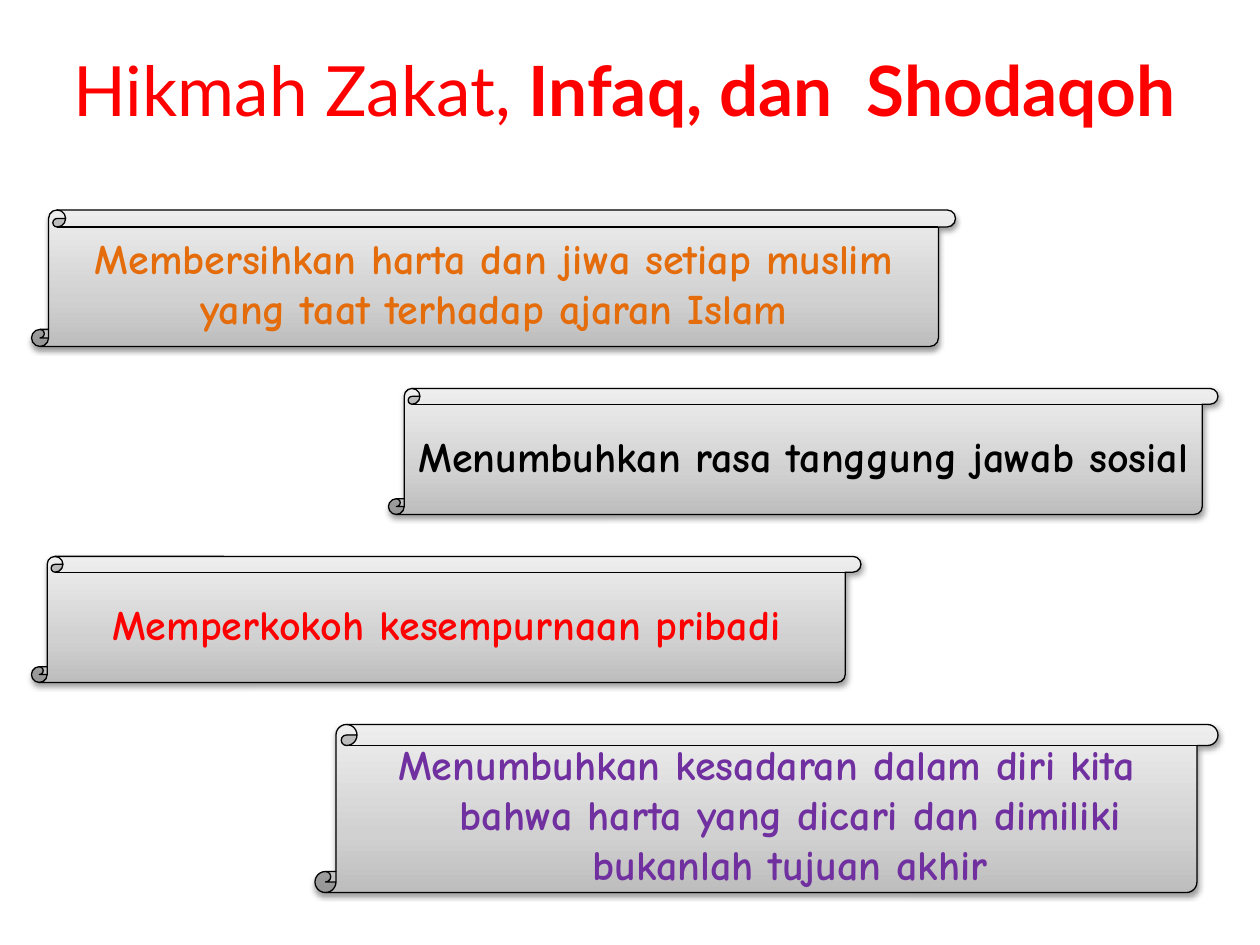
import pptx
import pptx.util
import pptx.dml.color
import pptx.enum.shapes
import pptx.enum.text
import pptx.oxml
import pptx.oxml.ns
import copy

RGB = pptx.dml.color.RGBColor
RED = RGB(0xFF, 0x00, 0x00)
ORANGE = RGB(0xE4, 0x6C, 0x0A)
BLACK = RGB(0x00, 0x00, 0x00)
PURPLE = RGB(0x70, 0x30, 0xA0)
STOPS = [(0, RGB(0xBD, 0xBD, 0xBD)), (0.35, RGB(0xD1, 0xD1, 0xD1)),
         (1, RGB(0xEE, 0xEE, 0xEE))]

PX = 7620  # EMU per px, 120 px to the inch
LEFT, RIGHT, TOP, GAP = 30, 1160, 200, 40
INDENT = 45
NS = pptx.oxml.ns.nsdecls("a")
CENTER = pptx.enum.text.PP_ALIGN.CENTER
MIDDLE = pptx.enum.text.MSO_ANCHOR.MIDDLE
FIXED = pptx.enum.text.MSO_AUTO_SIZE.NONE
SCROLL = pptx.enum.shapes.MSO_SHAPE.VERTICAL_SCROLL

# text, colour, width, height, at right side, hanging indent, is body
ITEMS = [
    ("Membersihkan harta dan jiwa setiap muslim yang taat terhadap ajaran Islam",
     ORANGE, 880, 130, False, False, False),
    ("Menumbuhkan rasa tanggung jawab sosial",
     BLACK, 790, 120, True, True, True),
    ("Memperkokoh kesempurnaan pribadi",
     RED, 790, 120, False, True, False),
    ("Menumbuhkan kesadaran dalam diri kita bahwa harta yang dicari dan "
     "dimiliki bukanlah tujuan akhir",
     PURPLE, 860, 160, True, True, False),
]


def place(shape, box):
    shape.left, shape.top, shape.width, shape.height = [v * PX for v in box]


def style(font, name, size, color, bold):
    font.name, font.size, font.bold = name, pptx.util.Pt(size), bold
    font.color.rgb = color


def frame(shape):
    text = shape.text_frame
    text.word_wrap = True
    text.auto_size = FIXED
    text.vertical_anchor = MIDDLE
    return text


def add_title(slide, box):
    title = slide.shapes.title
    place(title, box)
    para = frame(title).paragraphs[0]
    para.alignment = CENTER
    for words, bold in (("Hikmah Zakat, ", False), ("Infaq, dan  Shodaqoh", True)):
        run = para.add_run()
        run.text = words
        style(run.font, "Lato", 39.6, RED, bold)


def paint(shape):
    # Gradient, dark at the bottom
    shape.fill.gradient()
    shape.fill.gradient_angle = 90
    first = shape.fill.gradient_stops[0]
    stop_xml = first._gs
    stop_xml.addnext(copy.deepcopy(stop_xml))
    for stop, (pos, color) in zip(shape.fill.gradient_stops, STOPS):
        stop.position = pos
        stop.color.rgb = color
    shape.line.color.rgb = BLACK
    shape.line.width = pptx.util.Pt(0.75)
    # Soft shadow straight below
    shape.shadow.inherit = False
    glow = shape.element.spPr.find(pptx.oxml.ns.qn("a:effectLst"))
    glow.append(pptx.oxml.parse_xml(
        f'<a:outerShdw {NS} blurRad="40000" dist="20000" dir="5400000" '
        'rotWithShape="0"><a:srgbClr val="000000"><a:alpha val="38000"/>'
        '</a:srgbClr></a:outerShdw>'))


def add_scroll(slide, box, words, color, hang, body):
    if body:
        shape = slide.placeholders[1]
        place(shape, box)
        shape.element.spPr.append(pptx.oxml.parse_xml(
            f'<a:prstGeom {NS} prst="verticalScroll"><a:avLst/></a:prstGeom>'))
        # Keep reading order from top to bottom
        shape.element.getparent().append(shape.element)
    else:
        shape = slide.shapes.add_shape(SCROLL, *[v * PX for v in box])
    paint(shape)

    text = frame(shape)
    text.text = words
    para = text.paragraphs[0]
    para.alignment = CENTER
    para.space_before = pptx.util.Pt(0)
    props = para._p.get_or_add_pPr()
    shift = INDENT * PX if hang else 0
    props.set("marL", str(shift))
    props.set("indent", str(-shift))
    props.append(pptx.oxml.parse_xml(f"<a:buNone {NS}/>"))
    style(para.runs[0].font, "Comic Neue", 24, color, True)


def main():
    deck = pptx.Presentation()
    deck.slide_width, deck.slide_height = 1200 * PX, 900 * PX
    slide = deck.slides.add_slide(deck.slide_layouts[1])
    add_title(slide, (40, 0, 1110, 170))

    # Scrolls alternate sides, stacked with an equal gap
    top = TOP
    for words, color, width, height, right, hang, body in ITEMS:
        left = RIGHT - width if right else LEFT
        add_scroll(slide, (left, top, width, height), words, color, hang, body)
        top += height + GAP
    deck.save("out.pptx")


if __name__ == "__main__":
    main()
